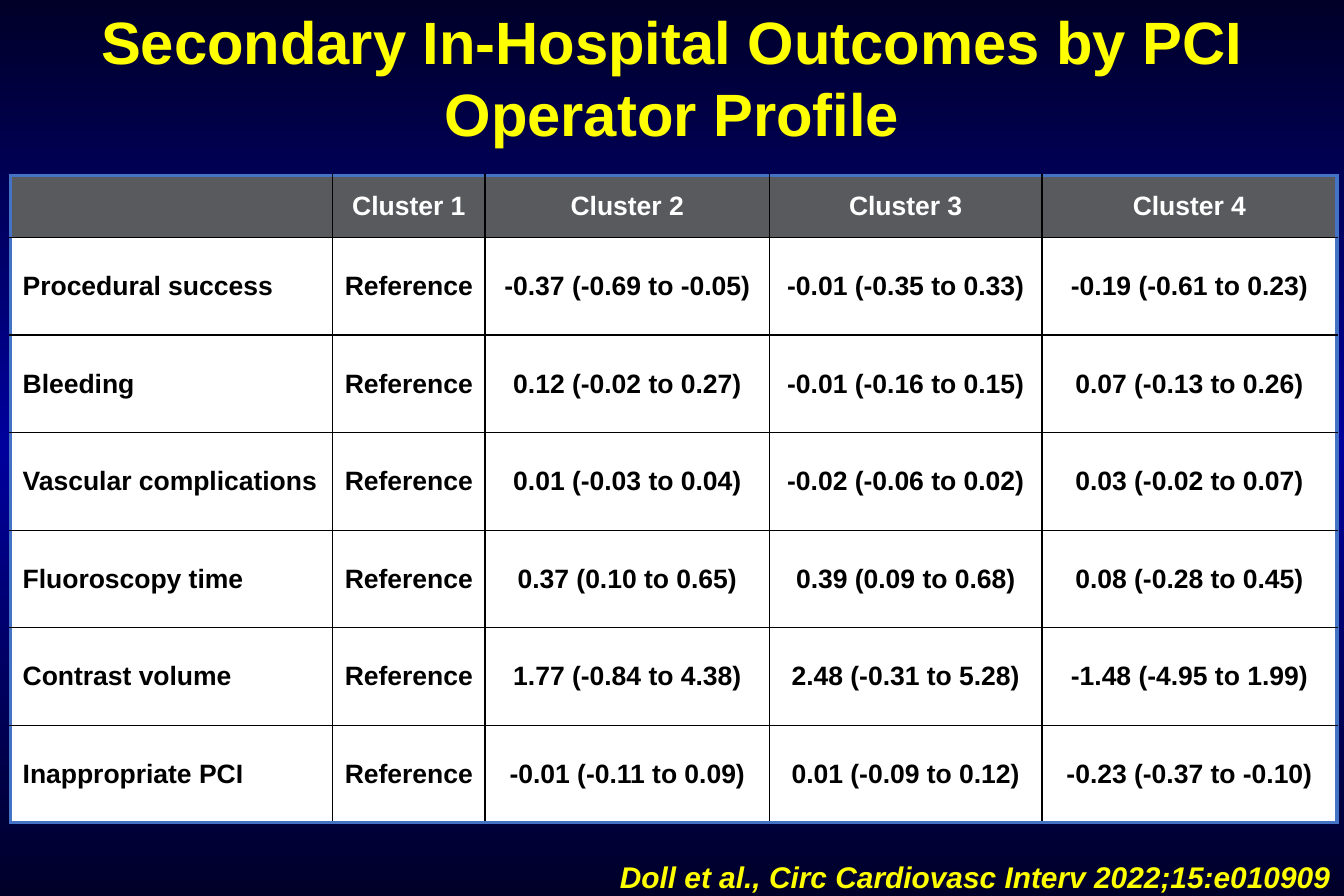
import copy

import pptx
import pptx.dml.color
import pptx.enum.text
import pptx.oxml.ns
import pptx.util
from lxml import etree

Pt = pptx.util.Pt
RGB = pptx.dml.color.RGBColor.from_string
ALIGN = pptx.enum.text.PP_ALIGN
MIDDLE = pptx.enum.text.MSO_ANCHOR.MIDDLE
qn = pptx.oxml.ns.qn

COLORS = {
    "navy": "000028",
    "blue": "00009C",
    "yellow": "FFFF00",
    "header": "595A5E",
    "frame": "4472C4",
    "white": "FFFFFF",
    "black": "000000",
}
HEADINGS = ["", "Cluster 1", "Cluster 2", "Cluster 3", "Cluster 4"]
OUTCOMES = [
    ["Procedural success", "-0.37 (-0.69 to -0.05)", "-0.01 (-0.35 to 0.33)", "-0.19 (-0.61 to 0.23)"],
    ["Bleeding", "0.12 (-0.02 to 0.27)", "-0.01 (-0.16 to 0.15)", "0.07 (-0.13 to 0.26)"],
    ["Vascular complications", "0.01 (-0.03 to 0.04)", "-0.02 (-0.06 to 0.02)", "0.03 (-0.02 to 0.07)"],
    ["Fluoroscopy time", "0.37 (0.10 to 0.65)", "0.39 (0.09 to 0.68)", "0.08 (-0.28 to 0.45)"],
    ["Contrast volume", "1.77 (-0.84 to 4.38)", "2.48 (-0.31 to 5.28)", "-1.48 (-4.95 to 1.99)"],
    ["Inappropriate PCI", "-0.01 (-0.11 to 0.09)", "0.01 (-0.09 to 0.12)", "-0.23 (-0.37 to -0.10)"],
]
COLUMN_WIDTHS = [194, 91.9, 171.4, 164.2, 177.8]
HEADER_HEIGHT, ROW_HEIGHT = 37.4, 58.8


def write(frame, text, size=16, color="black", italic=False, align=ALIGN.CENTER):
    """Put one bold Arial paragraph into a text frame."""
    frame.word_wrap = True
    para = frame.paragraphs[0]
    para.alignment = align
    span = para.add_run()
    span.text = text
    span.font.name = "Arial"
    span.font.size = Pt(size)
    span.font.bold = True
    span.font.italic = italic
    span.font.color.rgb = RGB(COLORS[color])


def add_border(cell, side, color, width):
    properties = cell._tc.get_or_add_tcPr()
    line = etree.SubElement(properties, qn("a:ln" + side), w=str(Pt(width)))
    fill = etree.SubElement(line, qn("a:solidFill"))
    etree.SubElement(fill, qn("a:srgbClr"), val=COLORS[color])


deck = pptx.Presentation()
deck.slide_width, deck.slide_height = Pt(810), Pt(540)
page = deck.slides.add_slide(deck.slide_layouts[6])

# Background: dark edges, brighter middle
background = page.background.fill
background.gradient()
background.gradient_angle = 270
stop_list = next(page.element.iter(qn("a:gsLst")))
stop_list.append(copy.deepcopy(stop_list[0]))
for stop, position, color in zip(background.gradient_stops, [0, 0.5, 1], ["navy", "blue", "navy"]):
    stop.position = position
    stop.color.rgb = RGB(COLORS[color])

title = page.shapes.add_textbox(Pt(0), Pt(-0.7), Pt(810), Pt(94.3))
write(title.text_frame, "Secondary In-Hospital Outcomes by PCI Operator Profile", size=36, color="yellow")

citation = page.shapes.add_textbox(Pt(366.5), Pt(514.1), Pt(443.5), Pt(28.8))
write(citation.text_frame, "Doll et al., Circ Cardiovasc Interv 2022;15:e010909",
      size=18, color="yellow", italic=True, align=ALIGN.LEFT)

# Outcome table
rows = [HEADINGS] + [[name, "Reference", *values] for name, *values in OUTCOMES]
last_row, last_column = len(rows) - 1, len(HEADINGS) - 1
table = page.shapes.add_table(
    len(rows), len(HEADINGS), Pt(6.5), Pt(105.8),
    Pt(sum(COLUMN_WIDTHS)), Pt(HEADER_HEIGHT + ROW_HEIGHT * last_row)).table
table.horz_banding = False
for column, width in zip(table.columns, COLUMN_WIDTHS):
    column.width = Pt(width)

for r, texts in enumerate(rows):
    table.rows[r].height = Pt(ROW_HEIGHT if r else HEADER_HEIGHT)
    for c, text in enumerate(texts):
        cell = table.cell(r, c)
        cell.vertical_anchor = MIDDLE
        # Centred columns get slimmer margins so that "Reference" stays on one line
        cell.margin_left = cell.margin_right = Pt(5 if c else 7.2)
        outer_sides = {"L": c == 0, "R": c == last_column, "T": r == 0, "B": r == last_row}
        for side, outer in outer_sides.items():
            add_border(cell, side, "frame" if outer else "black", 2.25 if outer else 1)
        cell.fill.solid()
        cell.fill.fore_color.rgb = RGB(COLORS["white" if r else "header"])
        if text:
            write(cell.text_frame, text, color="black" if r else "white",
                  align=ALIGN.CENTER if c else ALIGN.LEFT)

deck.save("out.pptx")
